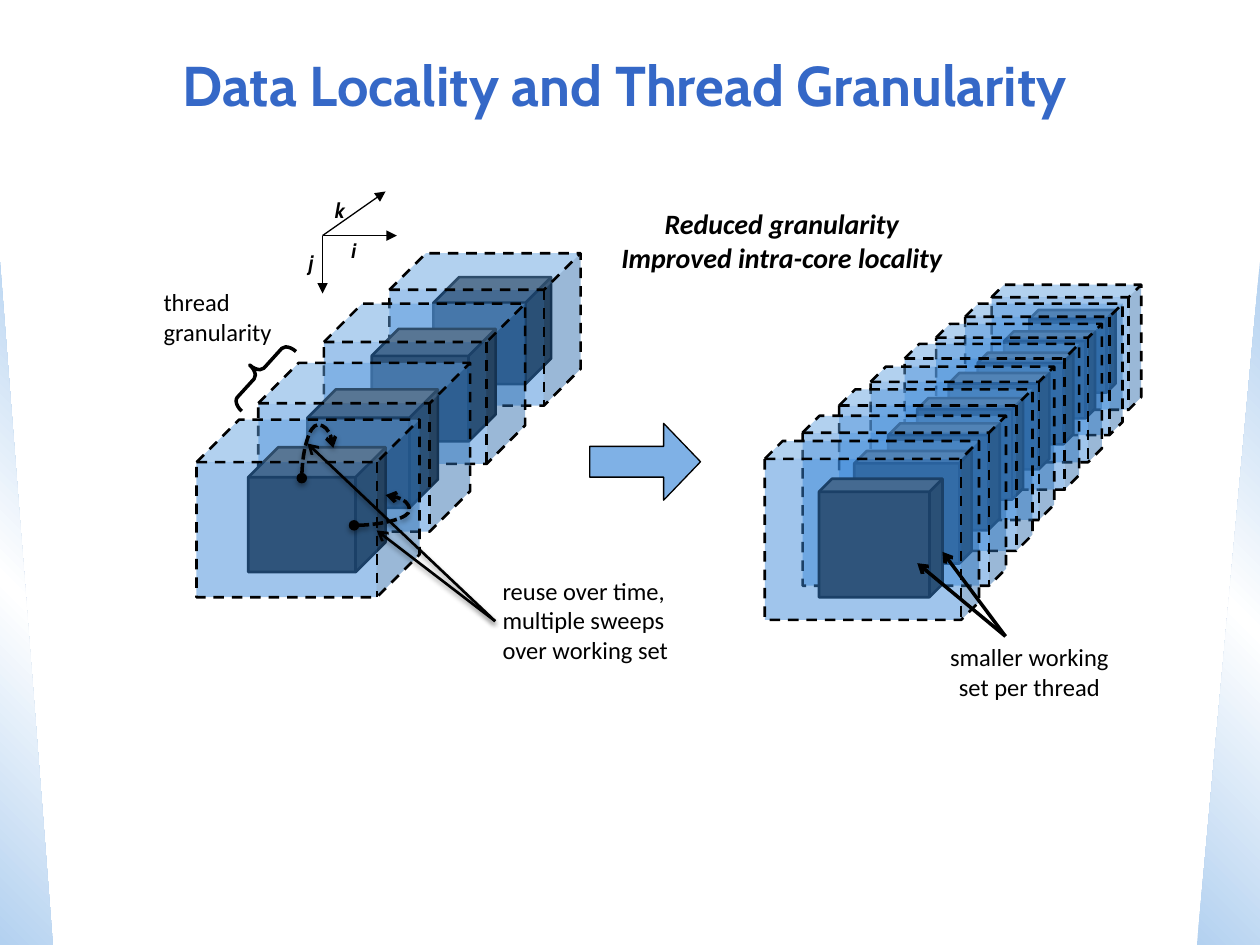
from lxml import etree
from pptx import Presentation
from pptx.dml.color import RGBColor
from pptx.enum.dml import MSO_LINE
from pptx.enum.shapes import MSO_CONNECTOR, MSO_SHAPE
from pptx.enum.text import MSO_ANCHOR, PP_ALIGN
from pptx.oxml import parse_xml
from pptx.oxml.ns import nsdecls, qn
from pptx.util import Inches, Pt

BLACK = RGBColor(0x00, 0x00, 0x00)
CORE = RGBColor(0x26, 0x26, 0x26)
HALO = RGBColor(0x39, 0x87, 0xD8)
ARROW_BLUE = RGBColor(0x7F, 0xB1, 0xE6)
TITLE_BLUE = RGBColor(0x35, 0x68, 0xC7)
PALE_BLUE = RGBColor(0xB3, 0xD1, 0xF0)
WHITE = RGBColor(0xFF, 0xFF, 0xFF)

CUBE, TRIANGLE = MSO_SHAPE.CUBE, MSO_SHAPE.RIGHT_TRIANGLE
RIGHT_ARROW, BRACE = MSO_SHAPE.RIGHT_ARROW, MSO_SHAPE.LEFT_BRACE
STRAIGHT, CURVE = MSO_CONNECTOR.STRAIGHT, MSO_CONNECTOR.CURVE
DASH, SHORT_DASH = MSO_LINE.DASH, MSO_LINE.SQUARE_DOT
LEFT, CENTER = PP_ALIGN.LEFT, PP_ALIGN.CENTER

SHRINK = 0.95  # each cube further back is this much smaller

# Positions of (core, halo) corners, from front to back
COARSE_CUBES = [
    ((1.97, 3.55), (1.56, 3.33)), ((2.44, 3.09), (2.05, 2.88)),
    ((2.95, 2.61), (2.57, 2.41)), ((3.44, 2.20), (3.09, 2.01)),
]
FINE_CUBES = [
    ((6.50, 3.80), (6.07, 3.50)), ((6.78, 3.58), (6.37, 3.30)),
    ((7.05, 3.36), (6.66, 3.09)), ((7.28, 3.16), (6.91, 2.91)),
    ((7.53, 2.96), (7.18, 2.73)), ((7.76, 2.80), (7.43, 2.57)),
    ((7.97, 2.63), (7.66, 2.41)), ((8.17, 2.46), (7.87, 2.26)),
]


class Painter:
    def __init__(self, slide, font="Calibri"):
        self.slide = slide
        self.font = font

    def title(self, text, left, top, width, height):
        box = self.slide.shapes.title
        box.left, box.top = Inches(left), Inches(top)
        box.width, box.height = Inches(width), Inches(height)
        box.text_frame.text = text
        box.text_frame.vertical_anchor = MSO_ANCHOR.MIDDLE
        self.format_text(box, 32, CENTER, TITLE_BLUE, "Cabin", bold=True)

    def format_text(self, box, size, align, color, font, bold=False, italic=False):
        for para in box.text_frame.paragraphs:
            para.alignment = align
            for span in para.runs:
                span.font.name, span.font.size = font, Pt(size)
                span.font.bold, span.font.italic = bold, italic
                span.font.color.rgb = color

    def text(self, text, left, top, width, height, size=14, align=LEFT,
             font=None, strong=False):
        box = self.slide.shapes.add_textbox(
            Inches(left), Inches(top), Inches(width), Inches(height))
        box.text_frame.word_wrap = True
        box.text_frame.text = text
        self.format_text(box, size, align, BLACK, font or self.font, strong, strong)

    def shape(self, kind, left, top, width, height, fill=None, line=None,
              adjustments=(), dash=None, opacity=None):
        shape = self.slide.shapes.add_shape(
            kind, Inches(left), Inches(top), Inches(width), Inches(height))
        shape.shadow.inherit = False
        for index, value in enumerate(adjustments):
            shape.adjustments[index] = value
        if fill is None:
            shape.fill.background()
        else:
            shape.fill.solid()
            shape.fill.fore_color.rgb = fill
        if opacity is not None:
            color = shape.fill._xPr.find(qn("a:solidFill"))[0]
            etree.SubElement(color, qn("a:alpha"), val=str(opacity * 1000))
        if line is None:
            shape.line.fill.background()
        else:
            shape.line.color.rgb = BLACK
            shape.line.width = Pt(line)
            shape.line.dash_style = dash
        return shape

    def side_wedge(self, left, width, angle, flip=False):
        """Draw a triangle at the slide's edge with a pale-white-pale gradient."""
        wedge = self.shape(TRIANGLE, left, 2.08, width, 5.42, WHITE)
        stops = "".join(
            f'<a:gs pos="{place * 1000}"><a:srgbClr val="{color}"/></a:gs>'
            for place, color in ((0, PALE_BLUE), (50, WHITE), (100, PALE_BLUE)))
        gradient = parse_xml(
            f'<a:gradFill {nsdecls("a")} rotWithShape="1"><a:gsLst>{stops}</a:gsLst>'
            f'<a:lin ang="{angle * 60000}" scaled="0"/></a:gradFill>')
        properties = wedge._element.spPr
        properties.replace(properties.find(qn("a:solidFill")), gradient)
        if flip:
            properties.find(qn("a:xfrm")).set("flipH", "1")

    def cube_row(self, places, core_size, halo_size, core_depth, halo_depth):
        """Draw dark cores inside translucent halos, the furthest first."""
        for step, (core, halo) in reversed(list(enumerate(places))):
            scale = SHRINK ** step
            self.shape(CUBE, *core, *(side * scale for side in core_size),
                       CORE, 1.5, [core_depth])
            self.shape(CUBE, *halo, *(side * scale for side in halo_size),
                       HALO, 1.5, [halo_depth], DASH, 48)

    def arrow(self, start, end, width, tip="arrow", shadow=False, kind=STRAIGHT):
        arrow = self.slide.shapes.add_connector(
            kind, *(Inches(value) for value in (*start, *end)))
        arrow.line.color.rgb = BLACK
        arrow.line.width = Pt(width)
        if kind == CURVE:
            arrow.line.dash_style = SHORT_DASH
        outline = arrow.line._get_or_add_ln()
        if kind == CURVE:
            etree.SubElement(outline, qn("a:headEnd"), type="oval")
        etree.SubElement(outline, qn("a:tailEnd"), type=tip)
        effects = etree.SubElement(arrow._element.spPr, qn("a:effectLst"))
        if shadow:
            cast = etree.SubElement(
                effects, qn("a:outerShdw"), blurRad=str(Pt(3.1)),
                dist=str(Pt(1.6)), dir="5400000", rotWithShape="0")
            color = etree.SubElement(cast, qn("a:srgbClr"), val=str(BLACK))
            etree.SubElement(color, qn("a:alpha"), val="38000")
        return arrow

    def reuse_loop(self, start, end, rotation=0):
        loop = self.arrow(start, end, 2, shadow=True, kind=CURVE)
        properties = loop._element.spPr
        properties.find(qn("a:xfrm")).set("rot", str(rotation * 60000))
        guides = properties.find(qn("a:prstGeom")).find(qn("a:avLst"))
        etree.SubElement(guides, qn("a:gd"), name="adj1", fmla="val 175700")


def main():
    deck = Presentation()
    deck.slide_width, deck.slide_height = Inches(10), Inches(7.5)
    page = deck.slides.add_slide(deck.slide_layouts[5])
    painter = Painter(page)

    painter.side_wedge(0, 0.42, 315)
    painter.side_wedge(9.5, 0.5, 45, flip=True)
    painter.title("Data Locality and Thread Granularity", 0.25, 0.25, 9.42, 0.83)

    painter.cube_row(FINE_CUBES, (0.98, 0.94), (1.7, 1.42), 0.11, 0.1)
    painter.cube_row(COARSE_CUBES, (1.09, 0.99), (1.77, 1.41), 0.24, 0.24)

    painter.reuse_loop((2.64, 3.8), (2.4, 3.55), rotation=90)
    painter.reuse_loop((2.81, 4.17), (3.06, 3.93))
    for target in ((2.99, 4.21), (2.44, 3.52)):
        painter.arrow((3.93, 4.93), target, 1.5, shadow=True)
    painter.text("reuse over time, multiple sweeps over working set",
                 3.89, 4.52, 1.66, 0.81)

    painter.shape(RIGHT_ARROW, 4.68, 3.36, 0.88, 0.61, ARROW_BLUE, 0.75, [0.4, 0.48])
    painter.text("Reduced granularity\nImproved intra-core locality",
                 4.68, 1.59, 3.05, 0.64, 16, CENTER, strong=True)

    brace = painter.shape(BRACE, 1.96, 2.64, 0.2, 0.64, line=2, adjustments=[0.29, 0.51])
    brace.rotation = 42.3
    painter.text("thread\ngranularity", 1.2, 2.23, 1.13, 0.57)

    for target in ((7.28, 4.47), (7.48, 4.38)):
        painter.arrow((7.98, 5.05), target, 2)
    painter.text("smaller working set per thread", 7.35, 5.05, 1.64, 0.57, align=CENTER)

    axes = [("i", (3.15, 1.87), (2.69, 1.84)), ("j", (2.56, 2.33), (2.35, 1.93)),
            ("k", (3.06, 1.52), (2.56, 1.52))]
    for name, tip, corner in axes:
        painter.arrow((2.56, 1.87), tip, 0.75, "triangle")
        painter.text(name, *corner, 0.25, 0.5, 12, font="Cabin", strong=True)

    deck.save("out.pptx")


if __name__ == "__main__":
    main()
